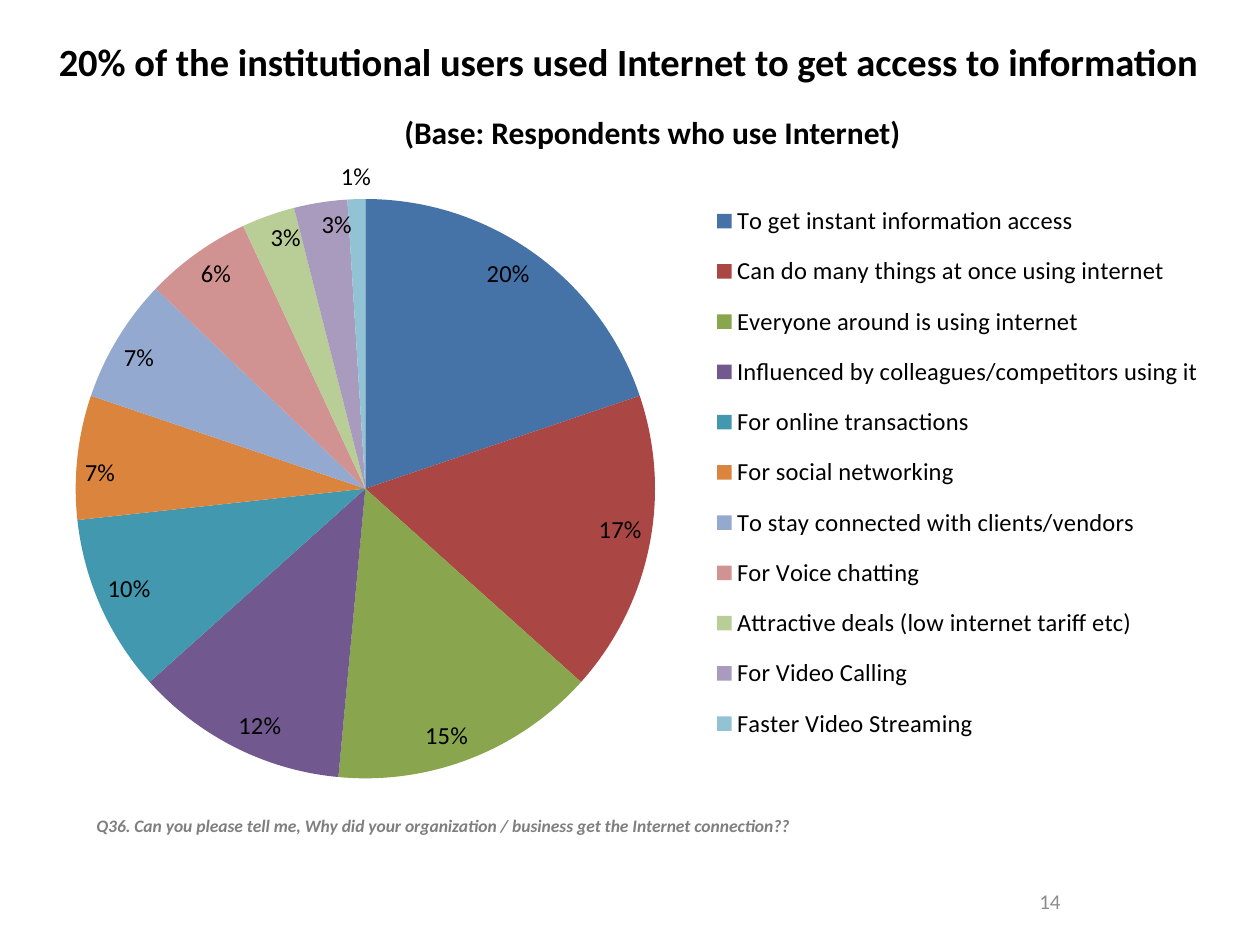
import pptx
import pptx.util
import pptx.chart.data
import pptx.dml.color
import pptx.enum.chart
import pptx.enum.text
import pptx.oxml

PX = 914400 / 126
COLORS = {"text": "000000", "note": "7F7F7F", "number": "8C8C8C"}
CHART_NS = "http://schemas.openxmlformats.org/drawingml/2006/chart"
REASONS = [
    ("To get instant information access", 20, "4572A7"),
    ("Can do many things at once using internet", 17, "AA4643"),
    ("Everyone around is using internet", 15, "89A54E"),
    ("Influenced by colleagues/competitors using it", 12, "71588F"),
    ("For online transactions", 10, "4198AF"),
    ("For social networking", 7, "DB843D"),
    ("To stay connected with clients/vendors", 7, "93A9CF"),
    ("For Voice chatting", 6, "D19392"),
    ("Attractive deals (low internet tariff etc)", 3, "B9CD96"),
    ("For Video Calling", 3, "A99BBD"),
    ("Faster Video Streaming", 1, "91C3D5"),
]

deck = pptx.Presentation()
deck.slide_width, deck.slide_height = int(1260 * PX), int(945 * PX)
slide = deck.slides.add_slide(deck.slide_layouts[6])


def emu(*lengths):
    return [int(length * PX) for length in lengths]


def set_layout(element, x, y, w, h, inner=False):
    """Place a chart part by fractions of the chart area."""
    target = '<c:layoutTarget val="inner"/>' if inner else ""
    layout = pptx.oxml.parse_xml(
        f'<c:layout xmlns:c="{CHART_NS}"><c:manualLayout>{target}'
        '<c:xMode val="edge"/><c:yMode val="edge"/>'
        f'<c:x val="{x}"/><c:y val="{y}"/><c:w val="{w}"/><c:h val="{h}"/>'
        "</c:manualLayout></c:layout>")
    for old in element.findall(f"{{{CHART_NS}}}layout"):
        element.remove(old)
    element.insert(0 if inner else 1, layout)


# Pie chart of reasons
reason_data = pptx.chart.data.CategoryChartData()
reason_data.categories = [reason for reason, share, color in REASONS]
reason_data.add_series("Series 1", [share for reason, share, color in REASONS])
chart = slide.shapes.add_chart(
    pptx.enum.chart.XL_CHART_TYPE.PIE, *emu(0, 147, 1260, 651), reason_data).chart
chart.has_title = False
chart.font.name = "Calibri"
chart.font.size = pptx.util.Pt(14)
chart.font.color.rgb = pptx.dml.color.RGBColor.from_string(COLORS["text"])
pie = chart.plots[0]
pie.vary_by_categories = True
shares = pie.series[0]
for index, (reason, share, color) in enumerate(REASONS):
    fill = shares.points[index].format.fill
    fill.solid()
    fill.fore_color.rgb = pptx.dml.color.RGBColor.from_string(color)

# Percent labels, with the thinnest slice labelled outside
labels = shares.data_labels
labels.show_percentage = True
labels.show_value = False
labels.number_format = "0%"
labels.number_format_is_linked = False
labels.position = pptx.enum.chart.XL_LABEL_POSITION.INSIDE_END
thin_slice = len(REASONS) - 1
shares.points[thin_slice].data_label.position = (
    pptx.enum.chart.XL_LABEL_POSITION.OUTSIDE_END)
thin_label = shares.data_labels._element.find(f"{{{CHART_NS}}}dLbl")
for tag, value in (("showVal", "0"), ("showPercent", "1")):
    thin_label.find(f"{{{CHART_NS}}}{tag}").set("val", value)

# Legend and plot placement
chart.has_legend = True
chart.legend.position = pptx.enum.chart.XL_LEGEND_POSITION.RIGHT
chart.legend.include_in_layout = False
set_layout(chart.legend._element, 0.54, 0.06, 0.44, 0.88)
set_layout(pie._element.getparent(), 0.06, 0.08, 0.46, 0.89, inner=True)

# Title, base, question and page number
center = pptx.enum.text.PP_ALIGN.CENTER
left = pptx.enum.text.PP_ALIGN.LEFT
top = pptx.enum.text.MSO_ANCHOR.TOP
middle = pptx.enum.text.MSO_ANCHOR.MIDDLE
CAPTIONS = [
    ("20% of the institutional users used Internet to get access to information",
     (-3, 32, 1263, 106), 22, "text", True, False, center, top),
    ("(Base: Respondents who use Internet)",
     (252, 107, 801, 50), 18, "text", True, False, center, top),
    ("Q36. Can you please tell me, Why did your organization / business get "
     "the Internet connection??",
     (84, 809, 977, 34), 10, "note", True, True, left, top),
    ("14", (903, 876, 294, 50), 12, "number", False, False, center, middle),
]
for wording, box, size, color, bold, italic, align, anchor in CAPTIONS:
    frame = slide.shapes.add_textbox(*emu(*box)).text_frame
    frame.word_wrap = True
    frame.vertical_anchor = anchor
    line = frame.paragraphs[0]
    line.text = wording
    line.alignment = align
    line.font.name = "Calibri"
    line.font.size = pptx.util.Pt(size)
    line.font.bold = bold
    line.font.italic = italic
    line.font.color.rgb = pptx.dml.color.RGBColor.from_string(COLORS[color])

deck.save("out.pptx")
